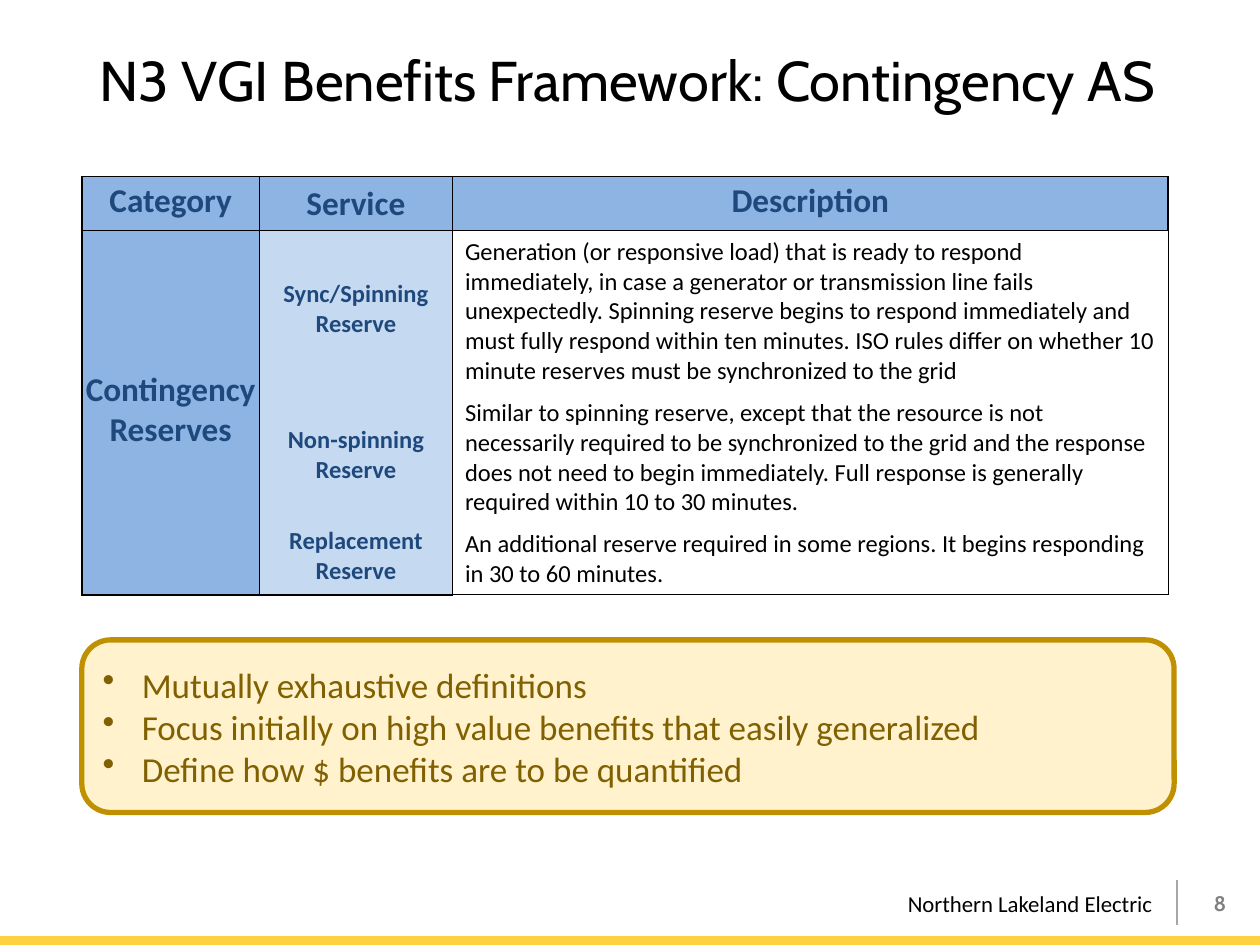
from dataclasses import dataclass

from lxml.etree import SubElement
from pptx import Presentation
from pptx.dml.color import RGBColor
from pptx.enum.shapes import MSO_CONNECTOR, MSO_SHAPE
from pptx.enum.text import MSO_ANCHOR, PP_ALIGN
from pptx.oxml.ns import qn
from pptx.slide import Slide
from pptx.table import Table, _Cell
from pptx.text.text import _Paragraph
from pptx.util import Cm, Pt

BLACK = RGBColor(0x00, 0x00, 0x00)
NAVY = RGBColor(0x1F, 0x49, 0x7D)
BLUE = RGBColor(0x8D, 0xB4, 0xE2)
PALE_BLUE = RGBColor(0xC5, 0xD9, 0xF1)
GRAY = RGBColor(0x80, 0x80, 0x80)
LIGHT_GRAY = RGBColor(0xA6, 0xA6, 0xA6)
YELLOW = RGBColor(0xFE, 0xD1, 0x41)
CREAM = RGBColor(0xFF, 0xF2, 0xCC)
GOLD = RGBColor(0xBF, 0x90, 0x00)
BROWN = RGBColor(0x80, 0x60, 0x00)

COLUMN_WIDTHS = (3.58, 3.89, 14.43)
HEADER_HEIGHT = 1.09
HEADERS = ("Category", "Service", "Description")
CATEGORY = "Contingency Reserves"
TAKEAWAYS = (
    "Mutually exhaustive definitions",
    "Focus initially on high value benefits that easily generalized",
    "Define how $ benefits are to be quantified",
)


@dataclass(frozen=True)
class Style:
    size: float
    color: RGBColor
    font: str = "Calibri"
    bold: bool = False
    align: PP_ALIGN = PP_ALIGN.LEFT


@dataclass(frozen=True)
class Caption:
    text: str
    left: float
    top: float
    width: float
    height: float
    style: Style
    anchor: MSO_ANCHOR = MSO_ANCHOR.MIDDLE
    line_spacing: float = 1.0


@dataclass(frozen=True)
class Service:
    name: str
    description: str
    height: float


HEADING = Style(19, NAVY, bold=True, align=PP_ALIGN.CENTER)
SERVICE_NAME = Style(14, NAVY, bold=True, align=PP_ALIGN.CENTER)
DESCRIPTION = Style(14, BLACK)
TAKEAWAY = Style(20, BROWN)

CAPTIONS = (
    Caption("Northern Lakeland Electric", 16.94, 17.81, 6.53, 0.81,
            Style(13, BLACK, align=PP_ALIGN.RIGHT), MSO_ANCHOR.TOP),
    Caption("N3 VGI Benefits Framework: Contingency AS", 1.75, 0.2, 21.89, 2.95,
            Style(32, BLACK, "Cabin"), line_spacing=0.9),
    Caption("8", 23.55, 17.7, 1.42, 1.02,
            Style(12, GRAY, "Cabin", True, PP_ALIGN.RIGHT)),
)

SERVICES = (
    Service("Sync/Spinning Reserve",
            "Generation (or responsive load) that is ready to respond immediately, "
            "in case a generator or transmission line fails unexpectedly. Spinning "
            "reserve begins to respond immediately and must fully respond within ten "
            "minutes. ISO rules differ on whether 10 minute reserves must be "
            "synchronized to the grid", 3.25),
    Service("Non-spinning Reserve",
            "Similar to spinning reserve, except that the resource is not necessarily "
            "required to be synchronized to the grid and the response does not need "
            "to begin immediately. Full response is generally required within 10 to "
            "30 minutes.", 2.64),
    Service("Replacement Reserve",
            "An additional reserve required in some regions. It begins responding in "
            "30 to 60 minutes.", 1.45),
)


def write(paragraph: _Paragraph, text: str, style: Style) -> None:
    paragraph.text = text
    paragraph.alignment = style.align
    font = paragraph.font
    font.name = style.font
    font.size = Pt(style.size)
    font.bold = style.bold
    font.color.rgb = style.color


def add_caption(slide: Slide, caption: Caption) -> None:
    box = slide.shapes.add_textbox(Cm(caption.left), Cm(caption.top),
                                   Cm(caption.width), Cm(caption.height))
    frame = box.text_frame
    frame.word_wrap = True
    frame.vertical_anchor = caption.anchor
    write(frame.paragraphs[0], caption.text, caption.style)
    frame.paragraphs[0].line_spacing = caption.line_spacing


def set_borders(cell: _Cell, left: float = 0, right: float = 0,
                top: float = 0, bottom: float = 0) -> None:
    properties = cell._tc.get_or_add_tcPr()
    for side, width in zip("LRTB", (left, right, top, bottom)):
        line = SubElement(properties, qn(f"a:ln{side}"), w=str(Pt(width)))
        if width:
            fill = SubElement(line, qn("a:solidFill"))
            SubElement(fill, qn("a:srgbClr"), val=str(BLACK))
        else:
            SubElement(line, qn("a:noFill"))


def fill_label(cell: _Cell, text: str, style: Style, color: RGBColor) -> None:
    cell.fill.solid()
    cell.fill.fore_color.rgb = color
    cell.margin_left = cell.margin_top = cell.margin_right = Cm(0.03)
    cell.margin_bottom = Cm(0.13)
    cell.vertical_anchor = MSO_ANCHOR.MIDDLE
    write(cell.text_frame.paragraphs[0], text, style)


def add_header(table: Table) -> None:
    last = len(HEADERS) - 1
    for column, header in enumerate(HEADERS):
        cell = table.cell(0, column)
        set_borders(cell, left=0.5 if column else 1,
                    right=1 if column == last else 0.5, top=1, bottom=1)
        fill_label(cell, header, HEADING, BLUE)
    table.cell(0, 1).vertical_anchor = MSO_ANCHOR.BOTTOM


def add_service(table: Table, row: int, service: Service) -> None:
    top = 1 if row == 1 else 0
    is_last = row == len(SERVICES)
    set_borders(table.cell(row, 0), 1, 1, 1, 1)
    name, description = table.cell(row, 1), table.cell(row, 2)
    set_borders(name, 1, 1, top, 1 if is_last else 0)
    fill_label(name, service.name, SERVICE_NAME, PALE_BLUE)
    set_borders(description, 1, 0.5, top, 0.5 if is_last else 0)
    description.fill.background()
    description.vertical_anchor = MSO_ANCHOR.MIDDLE
    write(description.text_frame.paragraphs[0], service.description, DESCRIPTION)


def add_services_table(slide: Slide) -> None:
    heights = (HEADER_HEIGHT, *(service.height for service in SERVICES))
    table = slide.shapes.add_table(len(heights), len(COLUMN_WIDTHS), Cm(1.65), Cm(3.56),
                                   Cm(sum(COLUMN_WIDTHS)), Cm(sum(heights))).table
    table.first_row = table.horz_banding = False
    for column, width in zip(table.columns, COLUMN_WIDTHS):
        column.width = Cm(width)
    for row, height in zip(table.rows, heights):
        row.height = Cm(height)
    add_header(table)
    for row, service in enumerate(SERVICES, 1):
        add_service(table, row, service)
    category = table.cell(1, 0)
    category.merge(table.cell(len(SERVICES), 0))
    fill_label(category, CATEGORY, HEADING, BLUE)


def add_takeaways(slide: Slide) -> None:
    panel = slide.shapes.add_shape(MSO_SHAPE.ROUNDED_RECTANGLE,
                                   Cm(1.65), Cm(12.9), Cm(22.02), Cm(3.48))
    panel.shadow.inherit = False
    panel.fill.solid()
    panel.fill.fore_color.rgb = CREAM
    panel.line.color.rgb = GOLD
    panel.line.width = Pt(3)
    frame = panel.text_frame
    frame.vertical_anchor = MSO_ANCHOR.MIDDLE
    for index, takeaway in enumerate(TAKEAWAYS):
        paragraph = frame.add_paragraph() if index else frame.paragraphs[0]
        write(paragraph, takeaway, TAKEAWAY)
        properties = paragraph._p.get_or_add_pPr()
        properties.set("marL", str(Cm(0.79)))
        properties.set("indent", str(Cm(-0.79)))
        bullet = properties.makeelement(qn("a:buChar"), {"char": "•"})
        properties.insert(0, bullet)


def add_footer_marks(slide: Slide) -> None:
    divider = slide.shapes.add_connector(MSO_CONNECTOR.STRAIGHT, Cm(23.72), Cm(17.73),
                                         Cm(23.72), Cm(18.64))
    divider.line.color.rgb = LIGHT_GRAY
    divider.line.width = Pt(1)
    SubElement(divider._element.spPr, qn("a:effectLst"))
    band = slide.shapes.add_shape(MSO_SHAPE.RECTANGLE, Cm(0), Cm(18.87), Cm(25.4), Cm(0.2))
    band.shadow.inherit = False
    band.fill.solid()
    band.fill.fore_color.rgb = YELLOW
    band.line.fill.background()


def main() -> None:
    presentation = Presentation()
    presentation.slide_width, presentation.slide_height = Cm(25.4), Cm(19.05)
    slide = presentation.slides.add_slide(presentation.slide_layouts[6])
    add_footer_marks(slide)
    for caption in CAPTIONS:
        add_caption(slide, caption)
    add_services_table(slide)
    add_takeaways(slide)
    presentation.save("out.pptx")


if __name__ == "__main__":
    main()
